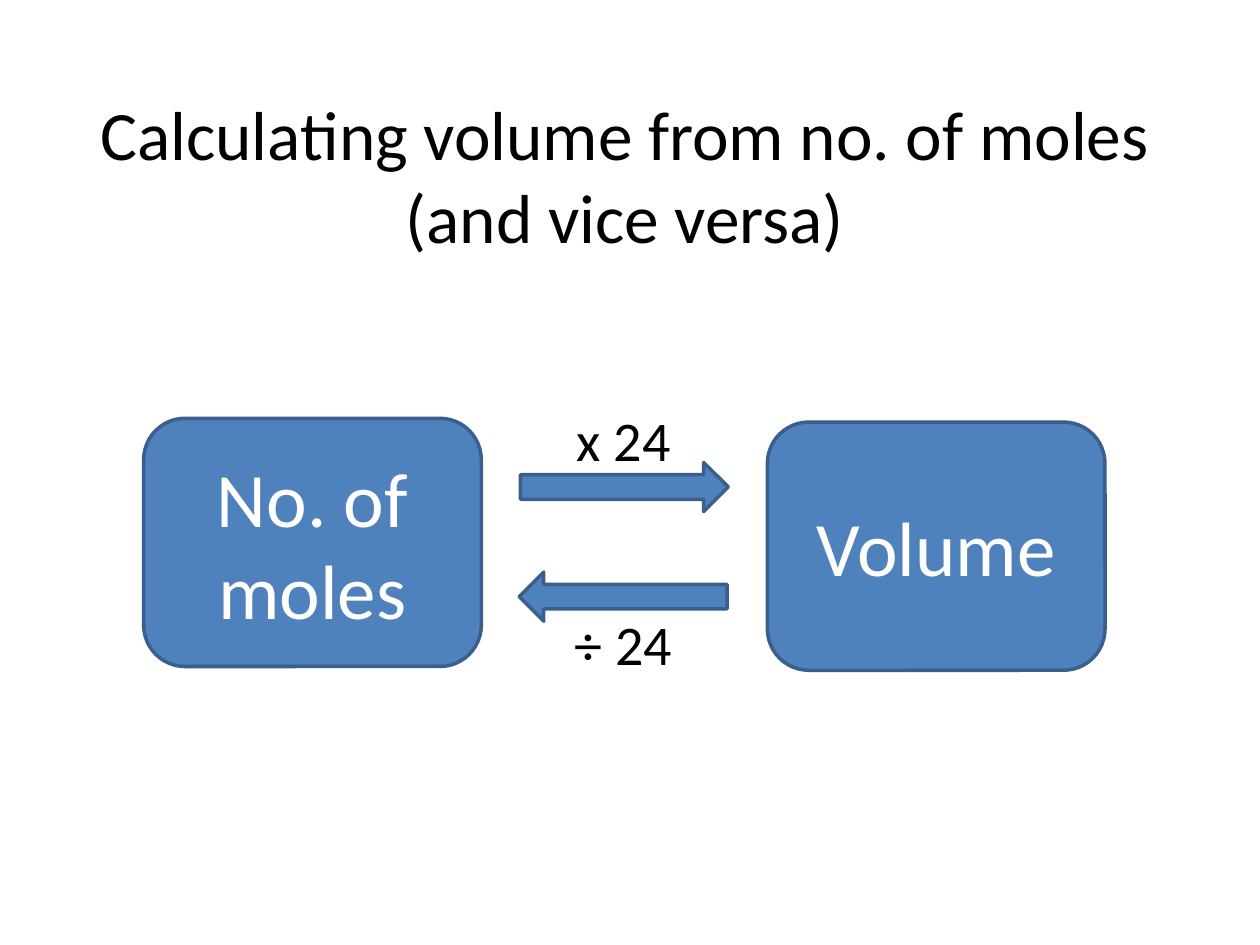
import pptx
import pptx.dml.color
import pptx.enum.shapes
import pptx.enum.text
import pptx.util

WIDTH, HEIGHT = 10, 7.5
COLOURS = {"fill": "4F81BD", "outline": "3A5F8C", "text": "000000", "box_text": "FFFFFF"}
FONT = "Calibri"
BOX_SIZE = (2.68, 1.97)
ARROW_SIZE = (1.65, 0.39)
LABEL_SIZE = (1.26, 0.64)
SHAPES = pptx.enum.shapes.MSO_SHAPE


def colour(name):
    return pptx.dml.color.RGBColor.from_string(COLOURS[name])


def place(left, top, size):
    return [pptx.util.Inches(length) for length in (left, top, *size)]


def write(frame, text, points, colour_name):
    """Put one centred, formatted paragraph in the frame."""
    frame.text = text
    frame.word_wrap = True
    paragraph = frame.paragraphs[0]
    paragraph.alignment = pptx.enum.text.PP_ALIGN.CENTER
    font = paragraph.runs[0].font
    font.name = FONT
    font.size = pptx.util.Pt(points)
    font.color.rgb = colour(colour_name)


def add_title(slide, text):
    title = slide.shapes.title
    title.left, title.top, title.width, title.height = place(0.46, 0.76, (0.9 * WIDTH, HEIGHT / 6))
    write(title.text_frame, text, 39.6, "text")
    title.text_frame.vertical_anchor = pptx.enum.text.MSO_ANCHOR.MIDDLE


def add_filled_shape(slide, preset, left, top, size):
    shape = slide.shapes.add_shape(preset, *place(left, top, size))
    shape.shadow.inherit = False
    shape.fill.solid()
    shape.fill.fore_color.rgb = colour("fill")
    shape.line.color.rgb = colour("outline")
    shape.line.width = pptx.util.Pt(2)
    return shape


def add_quantity(slide, text, left, top):
    box = add_filled_shape(slide, SHAPES.ROUNDED_RECTANGLE, left, top, BOX_SIZE)
    write(box.text_frame, text, 44, "box_text")
    box.text_frame.vertical_anchor = pptx.enum.text.MSO_ANCHOR.MIDDLE


def add_arrow(slide, left, top, rotation=0):
    arrow = add_filled_shape(slide, SHAPES.RIGHT_ARROW, left, top, ARROW_SIZE)
    arrow.rotation = rotation


def add_label(slide, text, top):
    """Add an operation label centred between the two boxes."""
    label = slide.shapes.add_textbox(*place(4.32, top, LABEL_SIZE))
    write(label.text_frame, text, 32, "text")
    label.text_frame.auto_size = pptx.enum.text.MSO_AUTO_SIZE.SHAPE_TO_FIT_TEXT


def main():
    deck = pptx.Presentation()
    deck.slide_width = pptx.util.Inches(WIDTH)
    deck.slide_height = pptx.util.Inches(HEIGHT)
    slide = deck.slides.add_slide(deck.slide_layouts.get_by_name("Title Only"))

    add_title(slide, "Calculating volume from no. of moles (and vice versa)")
    add_quantity(slide, "Volume", 6.09, 3.35)
    add_quantity(slide, "No. of moles", 1.14, 3.32)
    add_arrow(slide, 4.13, 3.67)
    add_arrow(slide, 4.12, 4.54, rotation=180)
    add_label(slide, "÷ 24", 4.79)
    add_label(slide, "x 24", 3.17)
    deck.save("out.pptx")


if __name__ == "__main__":
    main()
